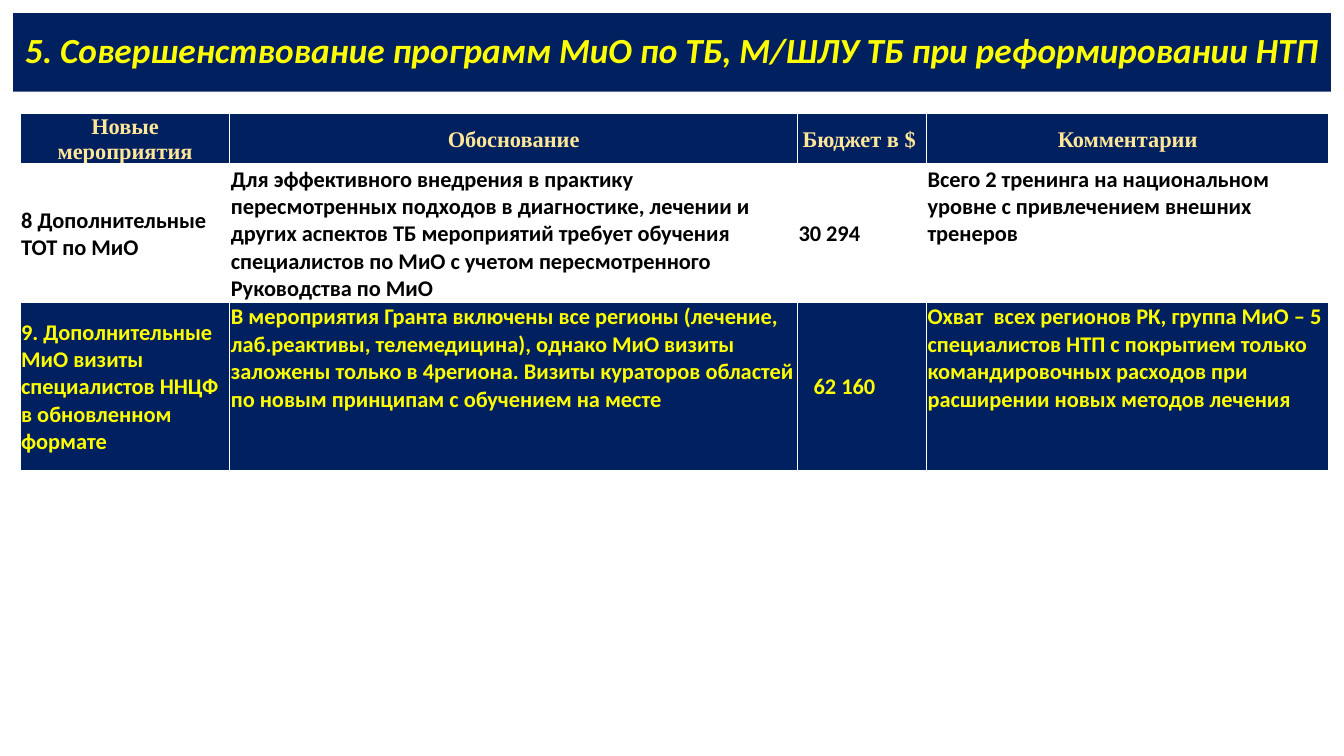
"""Builds the slide on improving the M&E programme for TB: a title bar and a budget table."""
from lxml.etree import SubElement
from pptx import Presentation
from pptx.dml.color import RGBColor
from pptx.enum.text import MSO_ANCHOR as Anchor, MSO_AUTO_SIZE as AutoSize, PP_ALIGN as Align
from pptx.oxml.ns import qn
from pptx.util import Inches, Pt

COLOURS = {"navy": "002060", "yellow": "FFFF00", "sand": "FFE699",
           "black": "000000", "white": "FFFFFF"}
COLUMNS = [2.08, 5.63, 1.28, 3.99]
ROWS = [0.5, 1.21, 1.67]
BORDERS = ["lnL", "lnR", "lnT", "lnB"]
HEADINGS = ["Новые мероприятия", "Обоснование", "Бюджет в $ ", "Комментарии"]
TRAINING = [
    "8 Дополнительные ТОТ по МиО",
    "Для эффективного внедрения в практику пересмотренных подходов в диагностике, "
    "лечении и других аспектов ТБ мероприятий требует обучения специалистов по МиО "
    "с учетом пересмотренного Руководства по МиО",
    "30 294",
    "Всего 2 тренинга на национальном уровне с привлечением внешних тренеров",
]
VISITS = [
    "9. Дополнительные МиО визиты специалистов ННЦФ в обновленном формате",
    "В мероприятия Гранта включены все регионы (лечение, лаб.реактивы, телемедицина), "
    "однако МиО визиты заложены только в 4региона. Визиты кураторов областей по новым "
    "принципам с обучением на месте",
    "62 160",
    "Охват  всех регионов РК, группа МиО – 5 специалистов НТП с покрытием только "
    "командировочных расходов при расширении новых методов лечения",
]


def write(frame, text, colour, font="Calibri", size=16, align=Align.LEFT,
          italic=False, spacing=1.0, indent=0):
    paragraph = frame.paragraphs[0]
    paragraph.alignment = align
    paragraph.line_spacing = spacing
    if indent:
        paragraph._p.get_or_add_pPr().set("marL", str(Inches(indent)))
    run = paragraph.add_run()
    run.text = text
    run.font.name, run.font.size = font, Pt(size)
    run.font.bold, run.font.italic = True, italic
    run.font.color.rgb = RGBColor.from_string(COLOURS[colour])


deck = Presentation()
deck.slide_width, deck.slide_height = Inches(13.33), Inches(7.5)
slide = deck.slides.add_slide(deck.slide_layouts[5])

title = slide.shapes.title
title.left, title.top, title.width, title.height = map(Inches, (0.13, 0.13, 13.07, 0.78))
title.fill.solid()
title.fill.fore_color.rgb = RGBColor.from_string(COLOURS["navy"])
heading = title.text_frame
heading.auto_size = AutoSize.NONE
heading.vertical_anchor = Anchor.MIDDLE
heading.margin_left = heading.margin_right = Inches(0.05)
write(heading, "5. Совершенствование программ МиО по ТБ, М/ШЛУ ТБ при реформировании НТП",
      "yellow", size=25.2, align=Align.CENTER, italic=True, spacing=0.9)

budget = slide.shapes.add_table(len(ROWS), len(COLUMNS), Inches(0.2), Inches(1.13),
                                Inches(sum(COLUMNS)), Inches(sum(ROWS))).table
budget.horz_banding = False
for column, width in zip(budget.columns, COLUMNS):
    column.width = Inches(width)
for row, height in zip(budget.rows, ROWS):
    row.height = Inches(height)

header_style = {"colour": "sand", "font": "Times New Roman", "align": Align.CENTER}
bands = [(HEADINGS, "navy", header_style),
         (TRAINING, "white", {"colour": "black"}),
         (VISITS, "navy", {"colour": "yellow"})]
for r, (texts, band_fill, style) in enumerate(bands):
    for c, text in enumerate(texts):
        cell = budget.cell(r, c)
        cell.margin_left = cell.margin_right = cell.margin_top = Inches(0.01)
        cell.margin_bottom = 0
        cell.vertical_anchor = Anchor.MIDDLE if r == 0 or c in (0, 2) else Anchor.TOP
        for side in BORDERS:
            heavy = (r, side) in ((0, "lnB"), (1, "lnT"))
            border = SubElement(cell._tc.get_or_add_tcPr(), qn(f"a:{side}"),
                                w=str(Pt(3 if heavy else 1)))
            SubElement(SubElement(border, qn("a:solidFill")), qn("a:srgbClr"),
                       val=COLOURS["white"])
        cell.fill.solid()
        cell.fill.fore_color.rgb = RGBColor.from_string(COLOURS[band_fill])
        write(cell.text_frame, text, indent=0.15 if (r, c) == (2, 2) else 0, **style)

deck.save("out.pptx")
